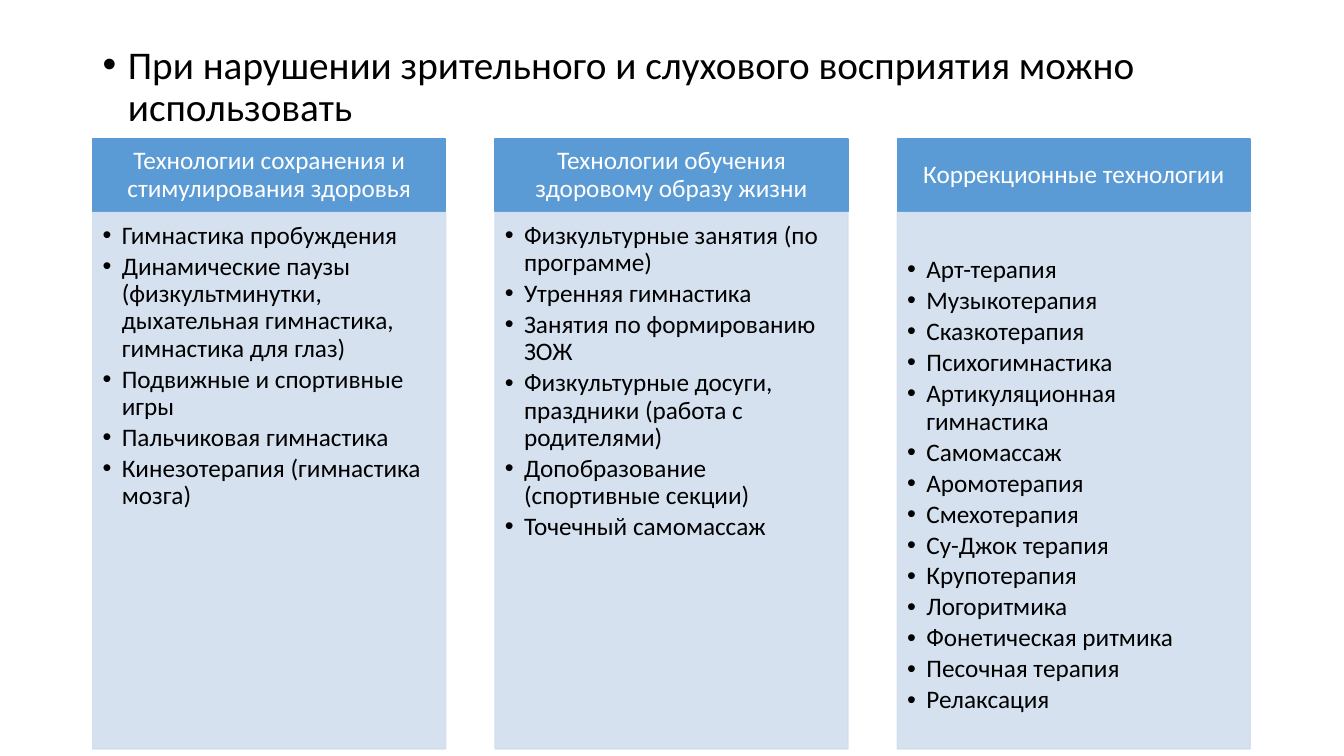
from lxml.etree import SubElement
from pptx import Presentation
from pptx.dml.color import RGBColor
from pptx.enum.shapes import MSO_SHAPE
from pptx.enum.text import MSO_ANCHOR, PP_ALIGN
from pptx.oxml.ns import qn
from pptx.util import Inches, Pt

THEME = {
    "font": "Calibri",
    "black": RGBColor.from_string("000000"),
    "white": RGBColor.from_string("FFFFFF"),
    "header": RGBColor.from_string("5B9BD5"),
    "body": RGBColor.from_string("D2DEEF"),
    "title_size": Pt(28),
    "text_size": Pt(18),
}

LEFT, COLUMN_WIDTH, COLUMN_STEP = 0.92, 3.5, 3.99
HEADER_TOP, HEADER_HEIGHT = 1.38, 0.72
BODY_TOP, BODY_HEIGHT = 2.11, 5.32

# Heading, top inset of the list, list items
COLUMNS = [
    ("Технологии сохранения и стимулирования здоровья", 0.1, [
        "Гимнастика пробуждения",
        "Динамические паузы (физкультминутки, дыхательная гимнастика, гимнастика для глаз)",
        "Подвижные и спортивные игры",
        "Пальчиковая гимнастика",
        "Кинезотерапия (гимнастика мозга)",
    ]),
    ("Технологии обучения здоровому образу жизни", 0.1, [
        "Физкультурные занятия (по программе)",
        "Утренняя гимнастика",
        "Занятия по формированию ЗОЖ",
        "Физкультурные досуги, праздники (работа с родителями)",
        "Допобразование (спортивные секции)",
        "Точечный самомассаж",
    ]),
    ("Коррекционные технологии", 0.44, [
        "Арт-терапия",
        "Музыкотерапия",
        "Сказкотерапия",
        "Психогимнастика",
        "Артикуляционная гимнастика",
        "Самомассаж",
        "Аромотерапия",
        "Смехотерапия",
        "Су-Джок терапия",
        "Крупотерапия",
        "Логоритмика",
        "Фонетическая ритмика",
        "Песочная терапия",
        "Релаксация",
    ]),
]


def write_text(shape, lines, size, color, insets, anchor, align, indent=0, space_after=0):
    """Fill a shape with paragraphs; a non-zero indent in inches adds bullets."""
    frame = shape.text_frame
    left, top, right, bottom = (Inches(inset) for inset in insets)
    frame_format = {
        "word_wrap": True, "vertical_anchor": anchor, "margin_left": left,
        "margin_top": top, "margin_right": right, "margin_bottom": bottom,
    }
    for name, value in frame_format.items():
        setattr(frame, name, value)
    for index, line in enumerate(lines):
        paragraph = frame.add_paragraph() if index else frame.paragraphs[0]
        paragraph.text = line
        paragraph_format = {
            "alignment": align, "line_spacing": 0.9, "space_after": Pt(space_after),
        }
        for name, value in paragraph_format.items():
            setattr(paragraph, name, value)
        if indent:
            properties = paragraph._p.get_or_add_pPr()
            properties.set("marL", str(Inches(indent)))
            properties.set("indent", str(-Inches(indent)))
            SubElement(properties, qn("a:buFont"), typeface="Arial")
            SubElement(properties, qn("a:buChar"), char="•")
        font = paragraph.runs[0].font
        for name, value in {"name": THEME["font"], "size": size}.items():
            setattr(font, name, value)
        font.color.rgb = color


def add_panel(slide, left, top, height, color, opacity=100):
    """Add a column rectangle with matching fill and line, opacity in percent."""
    panel = slide.shapes.add_shape(
        MSO_SHAPE.RECTANGLE, Inches(left), Inches(top), Inches(COLUMN_WIDTH), Inches(height))
    panel.shadow.inherit = False
    panel.fill.solid()
    panel.fill.fore_color.rgb = color
    panel.line.color.rgb = color
    panel.line.width = Pt(1)
    if opacity < 100:
        for color_element in panel._element.spPr.iter(qn("a:srgbClr")):
            SubElement(color_element, qn("a:alpha"), val=str(opacity * 1000))
    return panel


presentation = Presentation()
presentation.slide_width = Inches(13.33)
presentation.slide_height = Inches(7.5)
slide = presentation.slides.add_slide(presentation.slide_layouts[6])

title = slide.shapes.add_textbox(Inches(LEFT), Inches(0.4), Inches(11.5), Inches(0.98))
write_text(title, ["При нарушении зрительного и слухового восприятия можно использовать"],
           THEME["title_size"], THEME["black"], (0.1, 0.05, 0.1, 0.05),
           MSO_ANCHOR.TOP, PP_ALIGN.LEFT, indent=0.25)

for index, (heading, list_inset, items) in enumerate(COLUMNS):
    left = LEFT + index * COLUMN_STEP
    header = add_panel(slide, left, HEADER_TOP, HEADER_HEIGHT, THEME["header"])
    write_text(header, [heading], THEME["text_size"], THEME["white"],
               (0.14, 0.08, 0.14, 0.08), MSO_ANCHOR.MIDDLE, PP_ALIGN.CENTER)
    body = add_panel(slide, left, BODY_TOP, BODY_HEIGHT, THEME["body"], opacity=90)
    write_text(body, items, THEME["text_size"], THEME["black"],
               (0.1, list_inset, 0.14, 0.16), MSO_ANCHOR.TOP, PP_ALIGN.LEFT,
               indent=0.19, space_after=2.7)

presentation.save("out.pptx")
